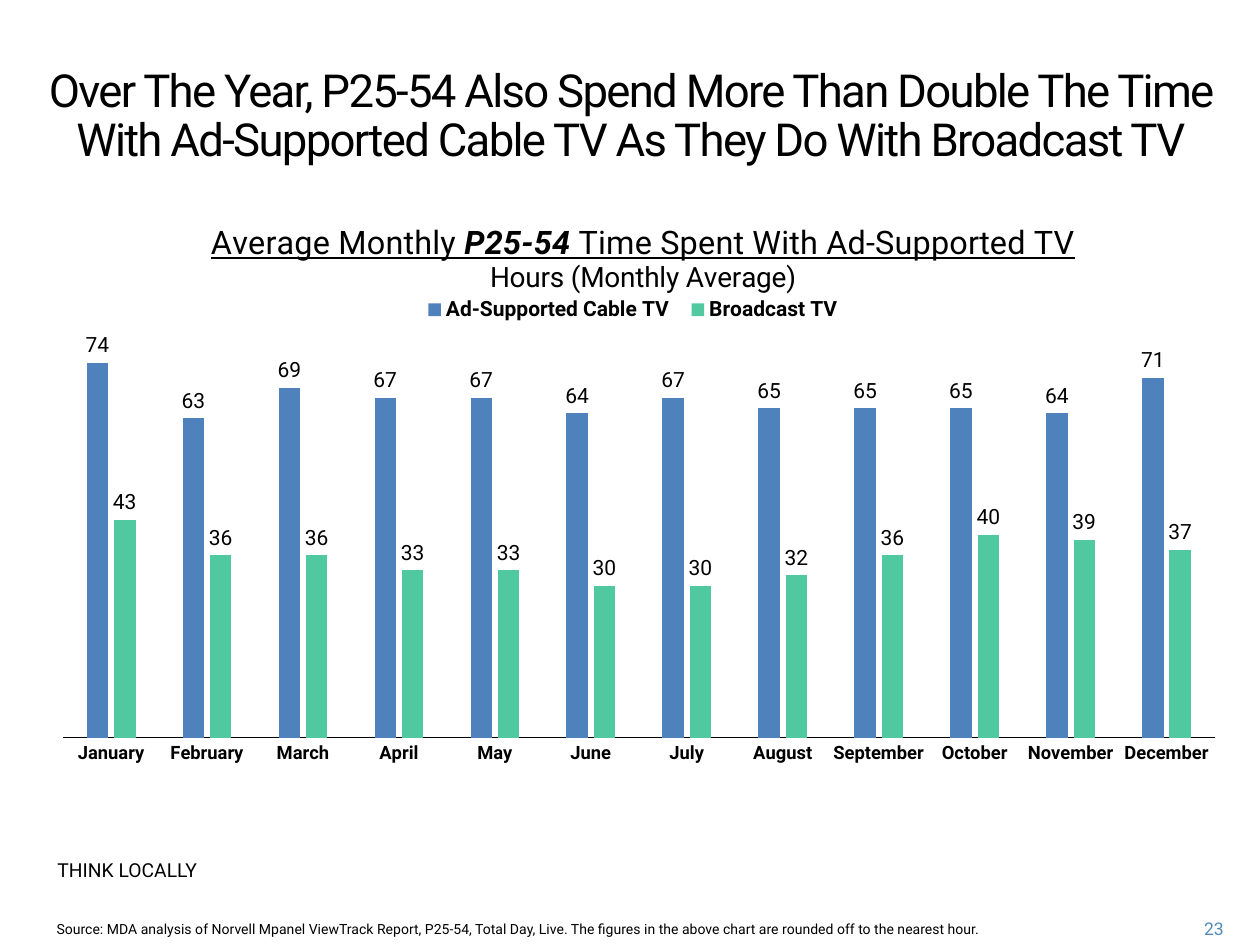
from dataclasses import dataclass, field

from lxml.etree import SubElement
from pptx import Presentation
from pptx.chart.data import CategoryChartData
from pptx.dml.color import RGBColor
from pptx.enum.chart import XL_CHART_TYPE, XL_LABEL_POSITION, XL_LEGEND_POSITION, XL_TICK_MARK
from pptx.enum.text import MSO_ANCHOR, PP_ALIGN
from pptx.oxml.ns import qn
from pptx.util import Cm, Pt

TYPEFACE = "Roboto"
BLACK = "000000"
NUMBER_FORMAT = "#,##0"
MONTHS = ("January", "February", "March", "April", "May", "June", "July",
          "August", "September", "October", "November", "December")


@dataclass
class Caption:
    text: str
    place: tuple
    size: float
    color: str = BLACK
    anchor: MSO_ANCHOR = MSO_ANCHOR.MIDDLE
    paragraph: dict = field(default_factory=dict)
    spacing: int = 0


@dataclass
class Channel:
    name: str
    color: str
    hours: tuple


@dataclass
class TitleSpan:
    text: str
    format: dict


CAPTIONS = (
    Caption("23", (23.37, 18.39, 1.55, 0.64), 10, "508ABA",
            paragraph={"alignment": PP_ALIGN.RIGHT}),
    Caption("Source: MDA analysis of Norvell Mpanel ViewTrack Report, P25-54, Total Day, Live. "
            "The figures in the above chart are rounded off to the nearest hour.",
            (0.89, 18.39, 20.32, 0.66), 8),
    Caption("Over The Year, P25-54 Also Spend More Than Double The Time "
            "With Ad-Supported Cable TV As They Do With Broadcast TV",
            (0.58, 1.27, 24.28, 2.16), 26,
            paragraph={"alignment": PP_ALIGN.CENTER, "line_spacing": Pt(28)}, spacing=-100),
    Caption("THINK LOCALLY", (0.91, 17.17, 4.78, 1.19), 11, anchor=MSO_ANCHOR.TOP),
)

CHANNELS = (
    Channel("Ad-Supported Cable TV", "4F81BD", (74, 63, 69, 67, 67, 64, 67, 65, 65, 65, 64, 71)),
    Channel("Broadcast TV", "50C8A0", (43, 36, 36, 33, 33, 30, 30, 32, 36, 40, 39, 37)),
)

HEADING = {"size": Pt(18.5), "bold": False, "underline": True}
TITLE_LINES = (
    (
        TitleSpan("Average Monthly ", HEADING),
        TitleSpan("P25-54", HEADING | {"bold": True, "italic": True}),
        TitleSpan(" Time Spent With Ad-Supported TV", HEADING),
    ),
    (TitleSpan("Hours (Monthly Average)", {"size": Pt(16), "bold": False}),),
)


def paint(target, color: str) -> None:
    target.rgb = RGBColor.from_string(color)


def apply(target, values: dict) -> None:
    for name, value in values.items():
        setattr(target, name, value)


def style_font(font, color: str = BLACK, **values) -> None:
    apply(font, {"name": TYPEFACE} | values)
    paint(font.color, color)


def add_caption(page, caption: Caption) -> None:
    box = page.shapes.add_textbox(*map(Cm, caption.place))
    apply(box.text_frame, {"word_wrap": True, "vertical_anchor": caption.anchor})
    para = box.text_frame.paragraphs[0]
    apply(para, caption.paragraph)
    span = para.add_run()
    span.text = caption.text
    style_font(span.font, caption.color, size=Pt(caption.size))
    if caption.spacing:
        span.font._element.set("spc", str(caption.spacing))


def place_part(chart, tag: str, inner: bool = False, **fractions: float) -> None:
    part = chart._chartSpace.find(f".//{qn(tag)}")
    for old in part.findall(qn("c:layout")):
        part.remove(old)
    layout = SubElement(part, qn("c:layout"))
    manual = SubElement(layout, qn("c:manualLayout"))
    if inner:
        SubElement(manual, qn("c:layoutTarget")).set("val", "inner")
    for axis in ("x", "y"):
        SubElement(manual, qn(f"c:{axis}Mode")).set("val", "edge")
    for name, value in fractions.items():
        SubElement(manual, qn(f"c:{name}")).set("val", str(value))
    overlay = part.find(qn("c:overlay"))
    if overlay is None:
        part.insert(0, layout)
    else:
        overlay.addprevious(layout)


def add_title(chart) -> None:
    frame = chart.chart_title.text_frame
    for index, line in enumerate(TITLE_LINES):
        para = frame.add_paragraph() if index else frame.paragraphs[0]
        para.alignment = PP_ALIGN.CENTER
        for part in line:
            span = para.add_run()
            span.text = part.text
            style_font(span.font, **part.format)
    place_part(chart, "c:title", x=0.137, y=0.04)


def style_axes(chart) -> None:
    months = chart.category_axis
    apply(months, {"major_tick_mark": XL_TICK_MARK.NONE, "minor_tick_mark": XL_TICK_MARK.NONE})
    style_font(months.tick_labels.font, size=Pt(10.5), bold=True)
    months.format.line.width = Pt(0.75)
    months.format.line.fill.solid()
    paint(months.format.line.fill.fore_color, BLACK)
    apply(chart.value_axis, {"minimum_scale": 0, "maximum_scale": 80,
                             "has_major_gridlines": False, "visible": False})


def style_channel(series, channel: Channel) -> None:
    series.invert_if_negative = False
    series.format.fill.solid()
    paint(series.format.fill.fore_color, channel.color)
    labels = series.data_labels
    apply(labels, {"show_value": True, "position": XL_LABEL_POSITION.OUTSIDE_END,
                   "number_format": NUMBER_FORMAT, "number_format_is_linked": False})
    style_font(labels.font, size=Pt(12))


def add_hours_chart(page) -> None:
    table = CategoryChartData(number_format=NUMBER_FORMAT)
    table.categories = MONTHS
    for channel in CHANNELS:
        table.add_series(channel.name, channel.hours)
    chart = page.shapes.add_chart(XL_CHART_TYPE.COLUMN_CLUSTERED,
                                  *map(Cm, (0.89, 3.91, 23.98, 12.29)), table).chart
    style_font(chart.font, size=Pt(10))
    add_title(chart)
    style_axes(chart)
    apply(chart.plots[0], {"gap_width": 219, "overlap": -27, "vary_by_categories": False})
    for series, channel in zip(chart.plots[0].series, CHANNELS):
        style_channel(series, channel)
    chart.has_legend = True
    apply(chart.legend, {"position": XL_LEGEND_POSITION.BOTTOM, "include_in_layout": False})
    style_font(chart.legend.font, size=Pt(12), bold=True)
    place_part(chart, "c:legend", x=0.31, y=0.16, w=0.37, h=0.06)
    place_part(chart, "c:plotArea", inner=True, x=0.016, y=0.227, w=0.968, h=0.665)


def main() -> None:
    deck = Presentation()
    apply(deck, {"slide_width": Cm(25.4), "slide_height": Cm(19.05)})
    page = deck.slides.add_slide(deck.slide_layouts[6])
    add_hours_chart(page)
    for caption in CAPTIONS:
        add_caption(page, caption)
    deck.save("out.pptx")


if __name__ == "__main__":
    main()
